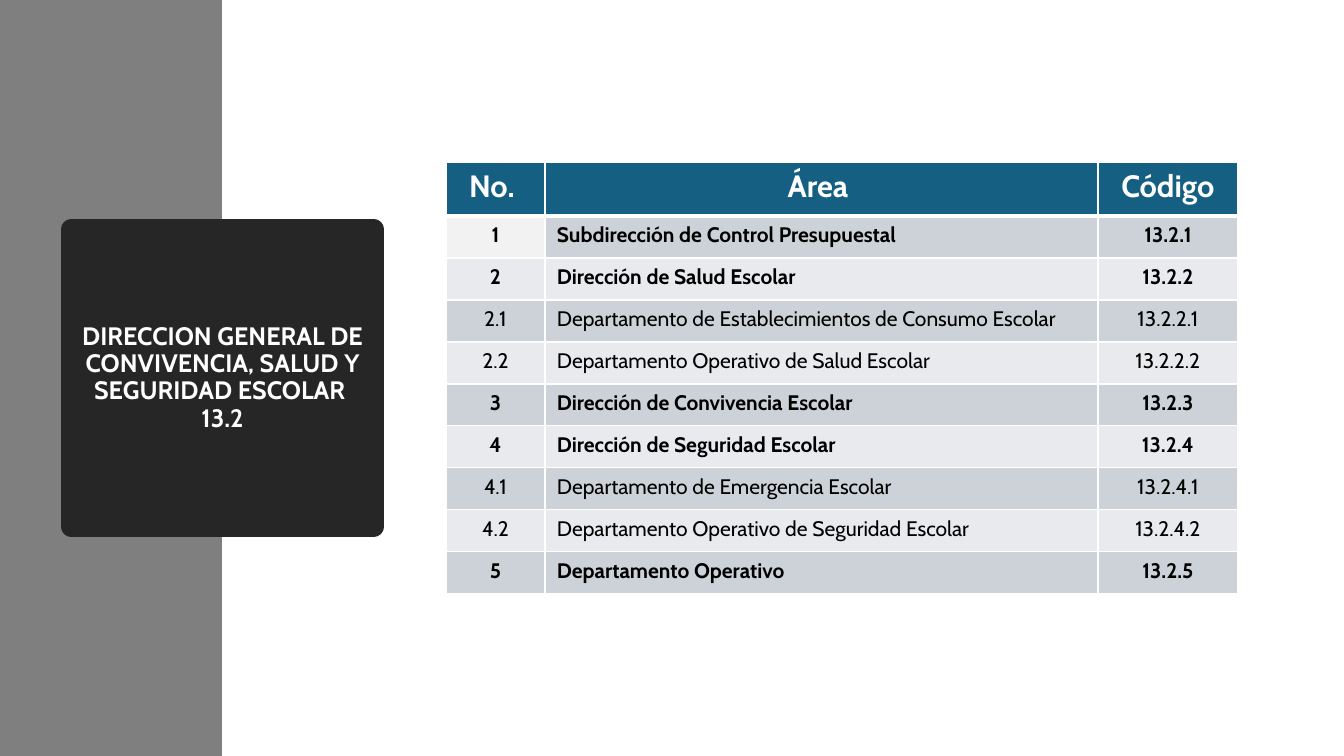
import pptx
import pptx.util
import pptx.dml.color
import pptx.enum.shapes
import pptx.enum.text
import pptx.oxml
import pptx.oxml.ns

SCALE = 12192000 / 1344  # EMU in one px
ALIGN = pptx.enum.text.PP_ALIGN
ANCHOR = pptx.enum.text.MSO_ANCHOR
NS = pptx.oxml.ns.nsdecls("a")

TITLE = "DIRECCION GENERAL DE CONVIVENCIA, SALUD Y SEGURIDAD ESCOLAR \v13.2"
HEADS = ["No. ", "Área ", "Código"]
AREAS = [
    ("1", "Subdirección de Control Presupuestal"),
    ("2", "Dirección de Salud Escolar"),
    ("2.1", "Departamento de Establecimientos de Consumo Escolar"),
    ("2.2", "Departamento Operativo de Salud Escolar"),
    ("3", "Dirección de Convivencia Escolar"),
    ("4", "Dirección de Seguridad Escolar"),
    ("4.1", "Departamento de Emergencia Escolar"),
    ("4.2", "Departamento Operativo de Seguridad Escolar"),
    ("5", "Departamento Operativo"),
]
WIDTHS = [99, 553, 140]
HEAD_H, ROW_H = 54, 42
BANDS = ["CCD2D8", "E8EAED"]


def px(n):
    return pptx.util.Emu(round(n * SCALE))


def paint(fill, hue):
    fill.solid()
    fill.fore_color.rgb = pptx.dml.color.RGBColor.from_string(hue)


def write(frame, text, size=15, hue="000000", bold=False,
          align=ALIGN.CENTER, space=1.0):
    para = frame.paragraphs[0]
    para.text = text
    para.alignment = align
    para.line_spacing = space
    for run in para.runs:
        font = run.font
        font.name = "Cabin"
        font.size = pptx.util.Pt(size)
        font.bold = bold
        paint(font.fill, hue)


def box(slide, x, y, w, h, hue, line=0):
    kind = pptx.enum.shapes.MSO_SHAPE.RECTANGLE
    shape = slide.shapes.add_shape(kind, px(x), px(y), px(w), px(h))
    shape.shadow.inherit = False
    paint(shape.fill, hue)
    if line:
        shape.line.width = pptx.util.Pt(line)
        paint(shape.line.fill, hue)
        # Round the outer corners
        shape.line._get_or_add_ln().append(
            pptx.oxml.parse_xml(f"<a:round {NS}/>"))
    else:
        shape.line.fill.background()
    return shape


def edge(cell, side, points):
    cell._tc.get_or_add_tcPr().append(pptx.oxml.parse_xml(
        f'<a:ln{side} {NS} w="{pptx.util.Pt(points)}"><a:solidFill>'
        f'<a:srgbClr val="FFFFFF"/></a:solidFill></a:ln{side}>'))


def style(cell, row, hue):
    cell.margin_left = cell.margin_right = px(12)
    cell.margin_top = cell.margin_bottom = px(6)
    # The rule under the heading is thicker
    for side in "LRTB":
        thick = (row, side) in [(0, "B"), (1, "T")]
        edge(cell, side, 3 if thick else 1)
    paint(cell.fill, hue)


def grid(slide, x, y):
    count = len(AREAS) + 1
    table = slide.shapes.add_table(
        count, len(WIDTHS), px(x), px(y), px(sum(WIDTHS)),
        px(HEAD_H + ROW_H * len(AREAS))).table
    for col, width in zip(table.columns, WIDTHS):
        col.width = px(width)
    for i, row in enumerate(table.rows):
        row.height = px(ROW_H if i else HEAD_H)

    # Heading
    for j, text in enumerate(HEADS):
        cell = table.cell(0, j)
        style(cell, 0, "156082")
        write(cell.text_frame, text, size=22, hue="FFFFFF", bold=True)

    # Areas: main ones are bold, their parts are plain
    for i, (num, area) in enumerate(AREAS, 1):
        for j, text in enumerate([num, area, "13.2." + num]):
            cell = table.cell(i, j)
            first = (i, j) == (1, 0)
            style(cell, i, "F2F2F2" if first else BANDS[(i - 1) % 2])
            write(cell.text_frame, text, bold="." not in num,
                  align=ALIGN.LEFT if j == 1 else ALIGN.CENTER)


def main():
    deck = pptx.Presentation()
    deck.slide_width, deck.slide_height = px(1344), px(756)
    slide = deck.slides.add_slide(deck.slide_layouts[6])

    # Side band and title
    box(slide, 0, 0, 222, 756, "7F7F7F")
    title = box(slide, 71, 229, 303, 298, "262626", line=13.75)
    frame = title.text_frame
    frame.word_wrap = True
    frame.vertical_anchor = ANCHOR.MIDDLE
    write(frame, TITLE, size=18, hue="FFFFFF", bold=True, space=0.9)

    # Table of areas
    grid(slide, 446, 162)
    deck.save("out.pptx")


if __name__ == "__main__":
    main()
